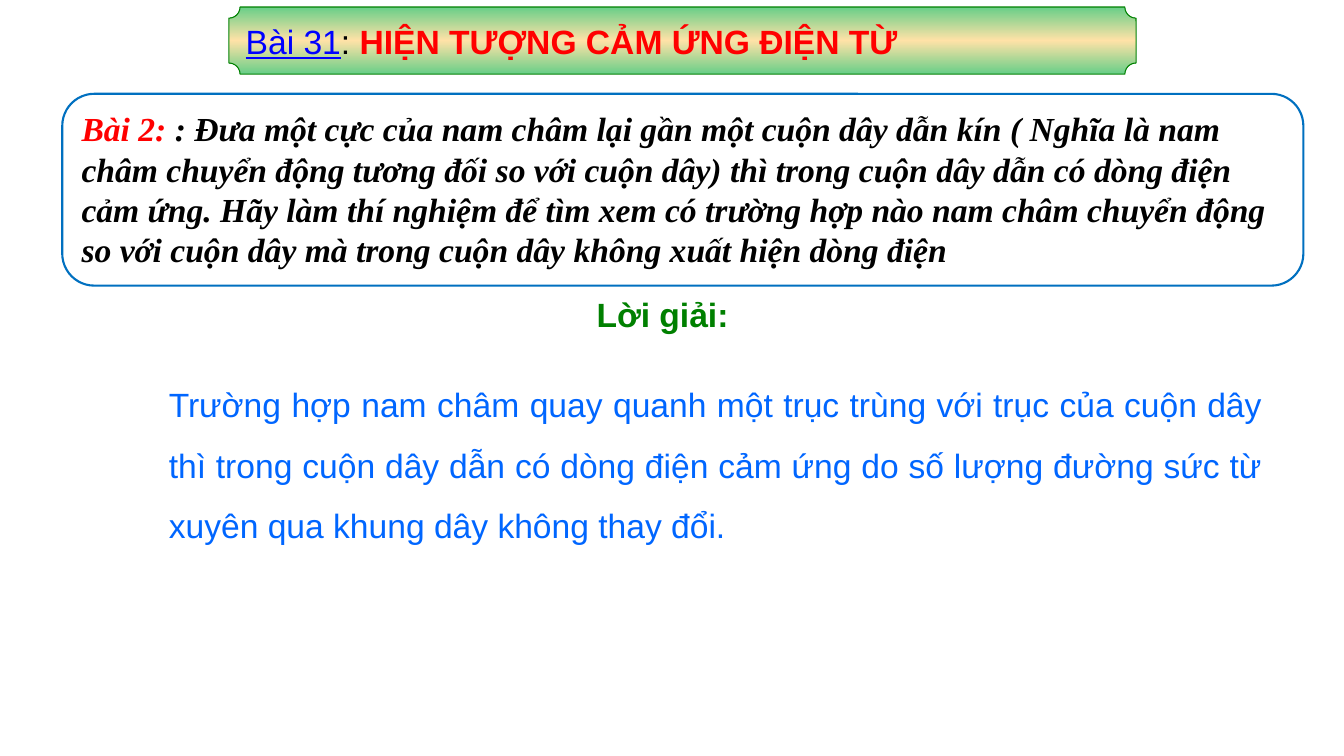
from copy import deepcopy

from pptx import Presentation
from pptx.dml.color import RGBColor
from pptx.enum.shapes import MSO_SHAPE
from pptx.enum.text import MSO_ANCHOR, MSO_AUTO_SIZE, PP_ALIGN
from pptx.util import Pt

# Each span: text, colour, styles
TITLE = [
    ("Bài 31", "0000FF", ["underline"]),
    (": ", "000000", []),
    ("HIỆN TƯỢNG CẢM ỨNG ĐIỆN TỪ", "FF0000", ["bold"]),
]
QUESTION = [
    ("Bài 2: ", "FF0000", ["bold", "italic"]),
    (": Đưa một cực của nam châm lại gần một cuộn dây dẫn kín ( Nghĩa là nam châm "
     "chuyển động tương đối so với cuộn dây) thì trong cuộn dây dẫn có dòng điện "
     "cảm ứng. Hãy làm thí nghiệm để tìm xem có trường hợp nào nam châm chuyển động "
     "so với cuộn dây mà trong cuộn dây không xuất hiện dòng điện",
     "000000", ["bold", "italic"]),
]
HEADING = [("Lời giải:", "008000", ["bold"])]
ANSWER = [
    ("Trường hợp nam châm quay quanh một trục trùng với trục của cuộn dây thì trong "
     "cuộn dây dẫn có dòng điện cảm ứng do số lượng đường sức từ xuyên qua khung dây "
     "không thay đổi.", "0066FF", []),
]

# Left, top, width, height in points
BANNER_AREA = (163.5, 5, 648, 48)
QUESTION_AREA = (44.5, 67, 886.5, 137)
# Spans, area, line spacing
SOLUTION = [
    (HEADING, (417, 217.5, 141, 25), Pt(18)),
    (ANSWER, (111.5, 256.5, 797, 133), 1.5),
]
BANNER_STOPS = [(0, "68CE88"), (0.5, "FFE2A7"), (1, "68CE88")]


def color(value):
    return RGBColor.from_string(value)


def points(area):
    return [Pt(length) for length in area]


def write(frame, spans, font="Arial", align=PP_ALIGN.LEFT):
    frame.word_wrap = True
    frame.auto_size = MSO_AUTO_SIZE.NONE
    para = frame.paragraphs[0]
    para.alignment = align
    for text, ink, styles in spans:
        span = para.add_run()
        span.text = text
        span.font.name = font
        span.font.size = Pt(24)
        span.font.color.rgb = color(ink)
        for style in ("bold", "italic", "underline"):
            setattr(span.font, style, style in styles)
    return para


def add_outlined(page, kind, area, ink, width):
    shape = page.shapes.add_shape(kind, *points(area))
    shape.shadow.inherit = False
    shape.fill.background()
    shape.line.color.rgb = color(ink)
    shape.line.width = Pt(width)
    return shape


def fill_banner(banner):
    """Fill with a vertical gradient of three stops."""
    banner.fill.gradient()
    banner.fill.gradient_angle = 270
    first = banner._element.spPr.xpath("./a:gradFill/a:gsLst/a:gs")[0]
    first.addnext(deepcopy(first))
    for stop, (position, ink) in zip(banner.fill.gradient_stops, BANNER_STOPS):
        stop.position = position
        stop.color.rgb = color(ink)


def main():
    deck = Presentation()
    deck.slide_width, deck.slide_height = Pt(960), Pt(540)
    page = deck.slides.add_slide(deck.slide_layouts[5])
    title = page.shapes.title

    box = add_outlined(page, MSO_SHAPE.ROUNDED_RECTANGLE, QUESTION_AREA, "0070C0", 1.5)
    box.text_frame.vertical_anchor = MSO_ANCHOR.TOP
    write(box.text_frame, QUESTION, "Times New Roman")

    banner = add_outlined(page, MSO_SHAPE.PLAQUE, BANNER_AREA, "008000", 0.75)
    fill_banner(banner)

    title.left, title.top, title.width, title.height = points(BANNER_AREA)
    title.text_frame.margin_left = Pt(12)
    title.text_frame.vertical_anchor = MSO_ANCHOR.MIDDLE
    write(title.text_frame, TITLE)
    banner._element.addnext(title._element)  # the title lies on its banner

    for spans, area, spacing in SOLUTION:
        box = page.shapes.add_textbox(*points(area))
        para = write(box.text_frame, spans, align=PP_ALIGN.JUSTIFY)
        para.line_spacing = spacing
        para.space_after = Pt(12)
        para._p.get_or_add_pPr().set("marL", str(Pt(2)))

    deck.save("out.pptx")


if __name__ == "__main__":
    main()
